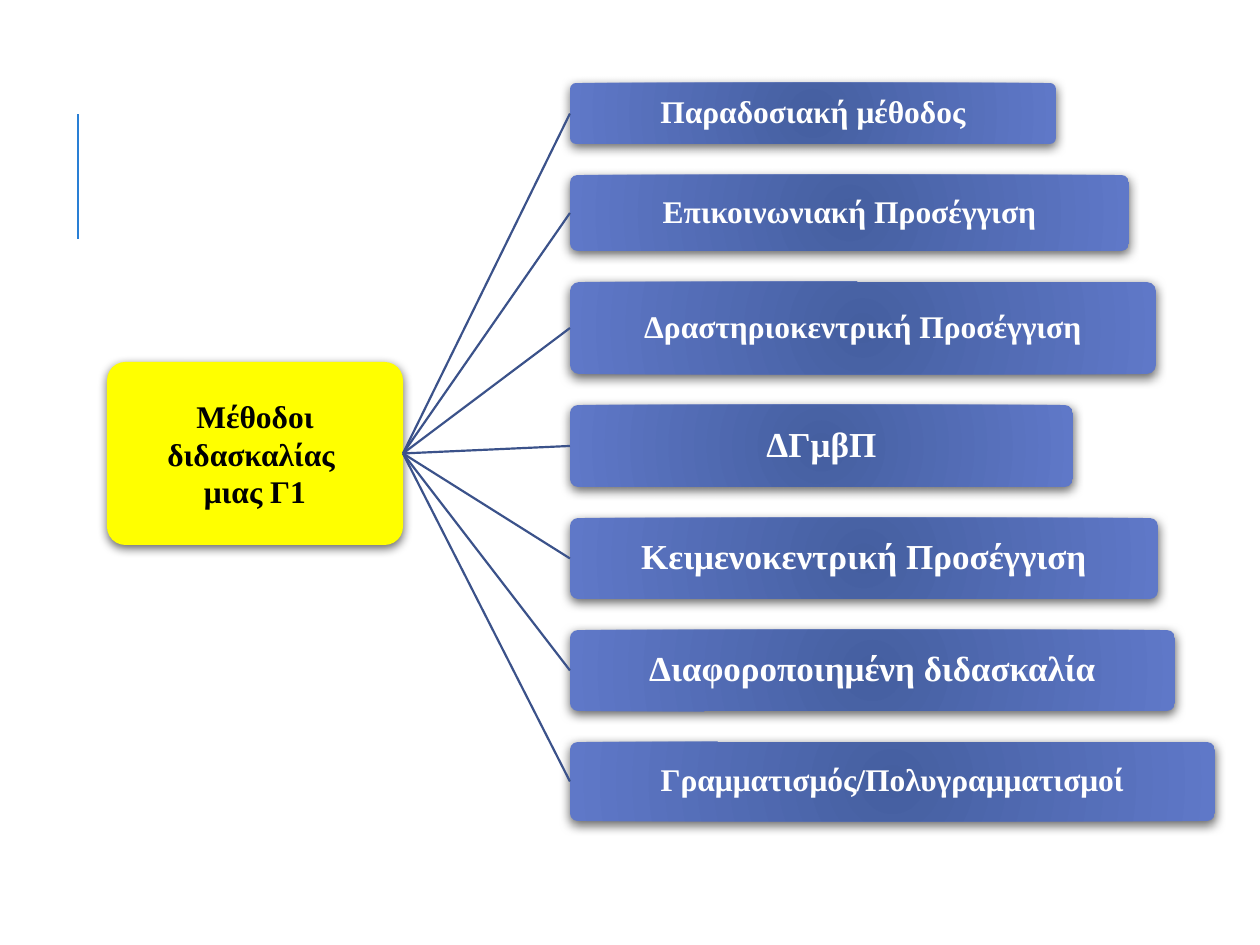
from pptx import Presentation
from pptx.dml.color import RGBColor
from pptx.enum.shapes import MSO_CONNECTOR as Conn, MSO_SHAPE as Form
from pptx.enum.text import MSO_ANCHOR as Anchor, PP_ALIGN as Align
from pptx.oxml import parse_xml
from pptx.oxml.ns import nsdecls, qn
from pptx.util import Inches, Pt

PX = Inches(1) / 126
WHITE = RGBColor(0xFF, 0xFF, 0xFF)
BLACK = RGBColor(0x00, 0x00, 0x00)
YELLOW = RGBColor(0xFF, 0xFF, 0x00)
DARK = RGBColor(0x45, 0x5F, 0xA0)
LIGHT = RGBColor(0x5F, 0x78, 0xC8)
NAVY = RGBColor(0x3B, 0x52, 0x8A)
BLUE = RGBColor(0x29, 0x7F, 0xD5)

SHADOW = f"""<a:outerShdw {nsdecls('a')} blurRad="76200" dist="25400" dir="5400000"
 algn="ctr" rotWithShape="0"><a:srgbClr val="000000"><a:alpha val="60000"/></a:srgbClr>
</a:outerShdw>"""
RADIAL = f"""<a:path {nsdecls('a')} path="circle"><a:fillToRect l="100000" t="100000"
 r="100000" b="100000"/></a:path>"""

deck = Presentation()
deck.slide_width, deck.slide_height = Inches(10), Inches(7.5)
slide = deck.slides.add_slide(deck.slide_layouts[6])


def add_box(text, x, y, w, h, size=18, color=WHITE, fill=None, pad=3, space=None):
    box = slide.shapes.add_shape(Form.ROUNDED_RECTANGLE, *(round(n * PX) for n in (x, y, w, h)))
    box.adjustments[0] = 0.1
    box.line.fill.background()
    box.shadow.inherit = False
    props = box._element.spPr
    props.find(qn("a:effectLst")).append(parse_xml(SHADOW))
    if fill:
        box.fill.solid()
        box.fill.fore_color.rgb = fill
    else:
        box.fill.gradient()
        for stop, tone, place in zip(box.fill.gradient_stops, (DARK, LIGHT), (0, 1)):
            stop.color.rgb = tone
            stop.position = place
        grad = props.find(qn("a:gradFill"))
        grad.replace(grad.find(qn("a:lin")), parse_xml(RADIAL))
    frame = box.text_frame
    frame.word_wrap = True
    frame.vertical_anchor = Anchor.MIDDLE
    frame.margin_left = frame.margin_right = round(pad * PX)
    frame.margin_top = frame.margin_bottom = round(pad * PX)
    frame.text = text
    for para in frame.paragraphs:
        para.alignment = Align.CENTER
        para.line_spacing = space
        font = para.runs[0].font
        font.name, font.size, font.bold = "Times New Roman", Pt(size), True
        font.color.rgb = color
    return box


def add_line(x1, y1, x2, y2, color, width):
    line = slide.shapes.add_connector(Conn.STRAIGHT, *(round(n * PX) for n in (x1, y1, x2, y2)))
    line.line.color.rgb = color
    line.line.width = Pt(width)
    line._element.spPr.append(parse_xml(f"<a:effectLst {nsdecls('a')}/>"))
    return line


add_line(78, 239, 78, 114, BLUE, 1.5)

root = add_box("Μέθοδοι διδασκαλίας \nμιας Γ1", 107, 362, 296, 183,
               color=BLACK, fill=YELLOW, pad=6)

METHODS = [
    ("Παραδοσιακή μέθοδος", 486, 61, 18),
    ("Επικοινωνιακή Προσέγγιση", 559, 76, 18),
    ("Δραστηριοκεντρική Προσέγγιση", 586, 92, 18),
    ("ΔΓμβΠ", 503, 82, 20),
    ("Κειμενοκεντρική Προσέγγιση", 588, 81, 20),
    ("Διαφοροποιημένη διδασκαλία", 605, 81, 20),
    ("Γραμματισμός/Πολυγραμματισμοί", 645, 79, 18),
]
LEFT, GAP = 570, 31
top = 83
for name, wide, high, size in METHODS:
    box = add_box(name, LEFT, top, wide, high, size=size, space=0.9)
    link = add_line(403, 453, LEFT, top + high // 2, NAVY, 1.25)
    link.begin_connect(root, 3)
    link.end_connect(box, 1)
    top += high + GAP

deck.save("out.pptx")
